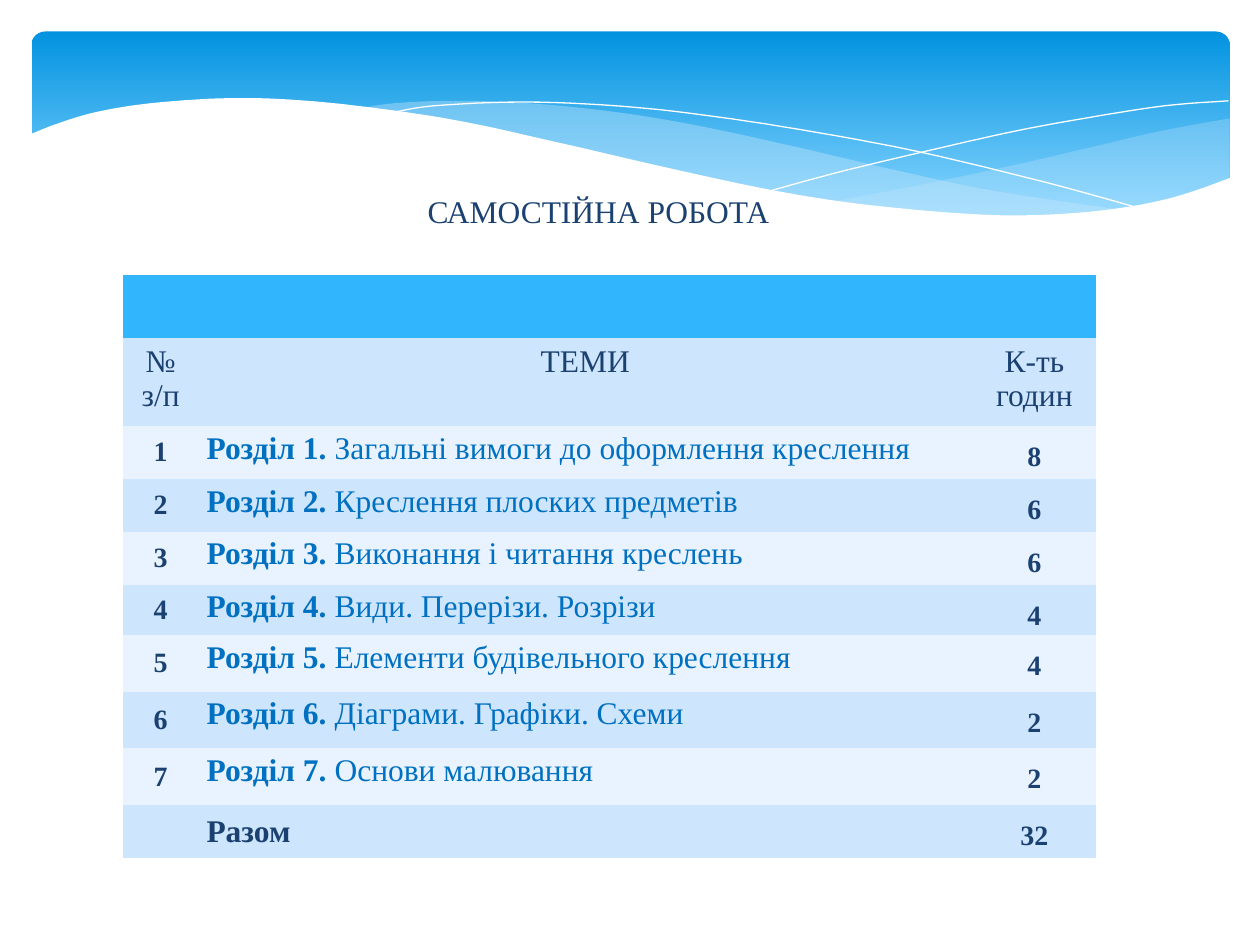
import pptx
import pptx.util
import pptx.dml.color
import pptx.enum.shapes
import pptx.enum.text
import pptx.oxml
import pptx.oxml.ns

RGBColor = pptx.dml.color.RGBColor
Inches = pptx.util.Inches
Pt = pptx.util.Pt
ALIGN = pptx.enum.text.PP_ALIGN
ANCHOR = pptx.enum.text.MSO_ANCHOR

NAVY = RGBColor(0x1B, 0x41, 0x71)
TOPIC_BLUE = RGBColor(0x00, 0x70, 0xC0)
HEADER_BLUE = RGBColor(0x31, 0xB6, 0xFD)
BAND_DARK = RGBColor(0xCE, 0xE5, 0xFE)
BAND_LIGHT = RGBColor(0xE8, 0xF3, 0xFF)
SKY_TOP = RGBColor(0x02, 0x93, 0xE0)
SKY_BOTTOM = RGBColor(0x83, 0xD3, 0xFE)
MIST = RGBColor(0xC6, 0xE7, 0xFC)
WHITE = RGBColor(0xFF, 0xFF, 0xFF)

FONT = "Times New Roman"
PLAIN_TABLE_STYLE = "{2D5ABB26-0587-4C30-8999-92F81FD0307C}"
COLUMN_WIDTHS = [0.59, 6.15, 0.98]
ROW_HEIGHTS = [0.5, 0.7, 0.42, 0.42, 0.42, 0.4, 0.45, 0.45, 0.45, 0.42]
HEADINGS = ["№ з/п", "ТЕМИ", "К-ть годин"]
TOPICS = [
    ("Загальні вимоги до оформлення креслення", 8),
    ("Креслення плоских предметів", 6),
    ("Виконання і читання креслень", 6),
    ("Види. Перерізи. Розрізи", 4),
    ("Елементи будівельного креслення", 4),
    ("Діаграми. Графіки. Схеми", 2),
    ("Основи малювання", 2),
]

RIGHT_MIST = [
    [(9.76, 0.94), (9.21, 1.04), (8.61, 1.18), (8.05, 1.31), (7.29, 1.47), (6.61, 1.6)],
    [(6.61, 1.6), (7.05, 1.65), (7.57, 1.7), (8.14, 1.72), (8.63, 1.7),
     (9.13, 1.62), (9.49, 1.52), (9.76, 1.41)],
]
LEFT_MIST = [
    [(8.93, 1.67), (8.37, 1.59), (7.75, 1.49), (7.06, 1.34), (6.29, 1.16),
     (5.55, 1.0), (4.89, 0.89), (4.2, 0.82), (3.61, 0.8), (3.13, 0.82), (2.86, 0.86)],
    [(2.86, 0.86), (3.42, 0.94), (4.04, 1.06), (4.91, 1.26), (5.66, 1.43),
     (6.34, 1.56), (6.95, 1.65), (7.61, 1.71), (8.18, 1.73), (8.57, 1.71), (8.93, 1.67)],
]
FALLING_LINE = [[(3.09, 0.9), (3.44, 0.84), (4.16, 0.81), (4.89, 0.84), (5.56, 0.91),
                 (6.36, 1.03), (7.27, 1.2), (8.31, 1.45), (9.07, 1.66)]]
RISING_LINE = [[(6.13, 1.51), (6.72, 1.35), (7.48, 1.17), (8.06, 1.04),
                (8.66, 0.93), (9.24, 0.84), (9.75, 0.8)]]
WHITE_WAVE = [
    [(9.77, 1.41), (9.3, 1.57), (8.75, 1.67), (8.09, 1.71), (7.44, 1.68),
     (6.68, 1.6), (6.03, 1.49), (5.29, 1.33), (4.47, 1.14), (3.65, 0.96),
     (2.92, 0.85), (2.3, 0.79), (1.77, 0.78), (1.19, 0.82), (0.76, 0.89),
     (0.46, 0.98), (0.23, 1.07)],
    [(0.23, 2.24), (9.77, 2.24)],
]


def smooth_curve(knots, steps=6):
    padded = [knots[0], *knots, knots[-1]]
    points = [knots[0]]
    for a, b, c, d in zip(padded, padded[1:], padded[2:], padded[3:]):
        for step in range(1, steps + 1):
            t = step / steps
            points.append(tuple(
                q + t * (r - p) / 2
                + t ** 2 * (p - 2.5 * q + 2 * r - s / 2)
                + t ** 3 * (1.5 * (q - r) + (s - p) / 2)
                for p, q, r, s in zip(a, b, c, d)))
    return points


def add_curve(slide, edges, closed):
    points = [(x * 1000, y * 1000) for edge in edges for x, y in smooth_curve(edge)]
    builder = slide.shapes.build_freeform(*points[0], scale=Inches(1) / 1000)
    builder.add_line_segments(points[1:], close=closed)
    curve = builder.convert_to_shape()
    curve.shadow.inherit = False
    return curve


def add_wave(slide, edges, color, opacity=100):
    wave = add_curve(slide, edges, True)
    wave.fill.solid()
    wave.fill.fore_color.rgb = color
    wave.line.fill.background()
    if opacity < 100:
        color_tag = wave.fill._xPr.find(".//" + pptx.oxml.ns.qn("a:srgbClr"))
        color_tag.append(pptx.oxml.parse_xml(
            f'<a:alpha {pptx.oxml.ns.nsdecls("a")} val="{opacity * 1000}"/>'))


def add_hairline(slide, edges):
    hairline = add_curve(slide, edges, False)
    hairline.fill.background()
    hairline.line.color.rgb = WHITE
    hairline.line.width = Pt(0)


def add_sky(slide):
    sky = slide.shapes.add_shape(
        pptx.enum.shapes.MSO_SHAPE.ROUNDED_RECTANGLE,
        Inches(0.25), Inches(0.25), Inches(9.51), Inches(1.56))
    sky.adjustments[0] = 0.07
    sky.shadow.inherit = False
    sky.line.fill.background()
    sky.fill.gradient()
    sky.fill.gradient_angle = 270
    for stop, color, position in zip(
            sky.fill.gradient_stops, (SKY_TOP, SKY_BOTTOM), (0, 0.9)):
        stop.color.rgb = color
        stop.position = position


def add_run(paragraph, text, size=18, bold=False, color=NAVY):
    run = paragraph.add_run()
    run.text = text
    run.font.name = FONT
    run.font.size = Pt(size)
    run.font.bold = bold
    run.font.color.rgb = color


def place_title(slide, text):
    title = slide.shapes.title
    title.left, title.top = Inches(2.24), Inches(1.47)
    title.width, title.height = Inches(5.02), Inches(0.4)
    title.text_frame.vertical_anchor = ANCHOR.TOP
    title.text_frame.word_wrap = True
    paragraph = title.text_frame.paragraphs[0]
    paragraph.alignment = ALIGN.CENTER
    add_run(paragraph, text)
    slide.shapes._spTree.append(title.element)


def fill_cell(cell, runs, align=ALIGN.CENTER, anchor=ANCHOR.TOP, tight=False, spacing=None):
    if tight:
        cell.margin_left = cell.margin_right = Inches(0.07)
        cell.margin_top = cell.margin_bottom = 0
    cell.vertical_anchor = anchor
    paragraph = cell.text_frame.paragraphs[0]
    paragraph.alignment = align
    paragraph.line_spacing = spacing
    for run in runs:
        add_run(paragraph, *run)


def fill_hours(cell, hours):
    fill_cell(cell, [(str(hours), 16, True)], tight=True, spacing=1.5)


def add_hours_table(slide):
    table = slide.shapes.add_table(
        len(ROW_HEIGHTS), len(COLUMN_WIDTHS), Inches(0.98), Inches(2.18),
        Inches(sum(COLUMN_WIDTHS)), Inches(sum(ROW_HEIGHTS))).table
    table.first_row = table.horz_banding = False
    table._tbl.tblPr.find(pptx.oxml.ns.qn("a:tableStyleId")).text = PLAIN_TABLE_STYLE
    for column, width in zip(table.columns, COLUMN_WIDTHS):
        column.width = Inches(width)
    for index, (row, height) in enumerate(zip(table.rows, ROW_HEIGHTS)):
        row.height = Inches(height)
        for cell in row.cells:
            cell.fill.solid()
            cell.fill.fore_color.rgb = (
                HEADER_BLUE if index == 0 else BAND_DARK if index % 2 else BAND_LIGHT)
    table.cell(0, 0).merge(table.cell(0, 2))

    for column, heading in enumerate(HEADINGS):
        fill_cell(table.cell(1, column), [(heading,)])
    for number, (topic, hours) in enumerate(TOPICS, 1):
        row = number + 1
        fill_cell(table.cell(row, 0), [(str(number), 16, True)], anchor=ANCHOR.MIDDLE)
        fill_cell(table.cell(row, 1),
                  [(f"Розділ {number}. ", 18, True, TOPIC_BLUE), (topic, 18, False, TOPIC_BLUE)],
                  align=ALIGN.JUSTIFY, tight=True, spacing=1.15)
        fill_hours(table.cell(row, 2), hours)
    total_row = len(TOPICS) + 2
    fill_cell(table.cell(total_row, 1), [("Разом", 18, True)],
              align=ALIGN.LEFT, anchor=ANCHOR.MIDDLE, tight=True)
    fill_hours(table.cell(total_row, 2), sum(hours for _, hours in TOPICS))


def main():
    deck = pptx.Presentation()
    deck.slide_width, deck.slide_height = Inches(10), Inches(7.5)
    slide = deck.slides.add_slide(deck.slide_layouts[5])
    add_sky(slide)
    add_wave(slide, RIGHT_MIST, MIST, 29)
    add_wave(slide, LEFT_MIST, MIST, 40)
    add_hairline(slide, FALLING_LINE)
    add_hairline(slide, RISING_LINE)
    add_wave(slide, WHITE_WAVE, WHITE)
    add_hours_table(slide)
    place_title(slide, "САМОСТІЙНА РОБОТА")
    deck.save("out.pptx")


if __name__ == "__main__":
    main()
